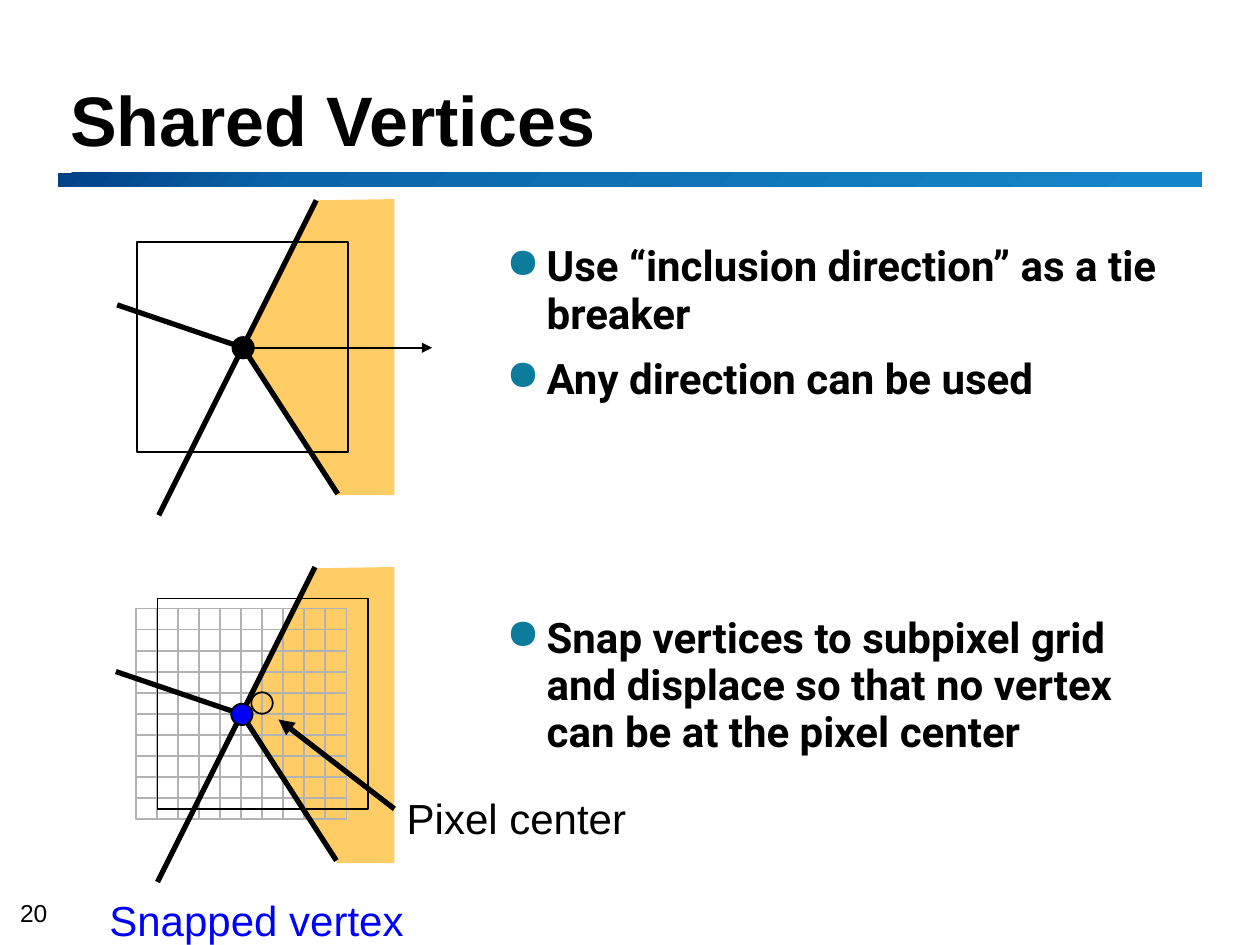
from lxml.etree import SubElement
from pptx import Presentation
from pptx.dml.color import RGBColor
from pptx.enum.shapes import MSO_CONNECTOR as Connector, MSO_SHAPE as Preset
from pptx.enum.text import MSO_ANCHOR as Anchor
from pptx.oxml.ns import qn
from pptx.util import Inches, Pt

COLORS = {
    "black": "000000", "blue": "0000FF", "grid": "B2B2B2",
    "wedge": "FFCC66", "bullet": "0C7B9C",
}
BAR_STOPS = [(0, "004187"), (21, "0A64A8"), (96, "1487C8")]

INSETS = (0.1, 0.05, 0.1, 0.05)
# text, box, insets, anchor, wrap, font
TEXTS = [
    ("20", (0.1, 7.13, 0.34, 0.23), (0.06, 0, 0, 0), Anchor.BOTTOM, True,
     {"size": Pt(14), "name": "Arial"}, "black"),
    ("Shared Vertices", (0.46, 0.33, 9.06, 0.99), INSETS, Anchor.BOTTOM, True,
     {"size": Pt(40), "name": "Arial", "bold": True}, "black"),
    ("Pixel center", (3.13, 6.24, 1.96, 0.5), INSETS, Anchor.TOP, False,
     {"size": Pt(24), "name": "Arial"}, "black"),
    ("Snapped vertex", (0.77, 7.05, 2.56, 0.5), INSETS, Anchor.TOP, False,
     {"size": Pt(24), "name": "Arial"}, "blue"),
]
BODY_BOX = (3.92, 1.88, 5.58, 5.58)
BODY_FONT = {"size": Pt(24), "name": "Roboto", "bold": True}
# text, points of space before
BULLETS = [
    ("Use “inclusion direction” as a tie breaker", 0),
    ("Any direction can be used", 6),
    ("Snap vertices to subpixel grid and displace so that no vertex "
     "can be at the pixel center", 117),
]

WEDGE_X = (2.51, 1.92, 2.68, 3.13, 3.13)
WEDGE_Y = (0.01, 1.16, 2.35, 2.35, 0)
# edge start and end, measured from the shared vertex
EDGES = [((0.58, -1.17), (-0.67, 1.33)), ((0, 0), (-1, -0.34)), ((0, 0), (0.75, 1.16))]
TIE_VERTEX, SNAPPED_VERTEX = (1.93, 2.76), (1.92, 5.67)
PIXEL = 1.67
CELLS = 10
GRID_LEFT, GRID_TOP = 1.08, 4.83
DOT = 0.17

presentation = Presentation()
presentation.slide_width, presentation.slide_height = Inches(10), Inches(7.5)
slide = presentation.slides.add_slide(presentation.slide_layouts[6])


def rgb(color):
    return RGBColor.from_string(COLORS[color])


def paint(shape, fill=None, line=None):
    shape.shadow.inherit = False
    if fill:
        shape.fill.solid()
        shape.fill.fore_color.rgb = rgb(fill)
    else:
        shape.fill.background()
    if line:
        shape.line.color.rgb = rgb(line)
        shape.line.width = Pt(1)
    else:
        shape.line.fill.background()


def add_preset(preset, box, fill=None, line="black"):
    shape = slide.shapes.add_shape(preset, *map(Inches, box))
    paint(shape, fill, line)
    return shape


def add_dot(center, fill=None):
    x, y = center
    add_preset(Preset.OVAL, (x - DOT / 2, y - DOT / 2, DOT, DOT), fill)


def add_line(start, end, width, arrow=False):
    line = slide.shapes.add_connector(Connector.STRAIGHT, *map(Inches, (*start, *end)))
    line.line.color.rgb = rgb("black")
    line.line.width = Pt(width)
    if arrow:
        SubElement(line.line._get_or_add_ln(), qn("a:tailEnd"), type="triangle")
    SubElement(line._element.spPr, qn("a:effectLst"))


def add_wedge(top):
    points = [(Inches(x), Inches(top + y)) for x, y in zip(WEDGE_X, WEDGE_Y)]
    builder = slide.shapes.build_freeform(*points[0])
    builder.add_line_segments(points[1:], close=True)
    paint(builder.convert_to_shape(), "wedge")


def add_edges(vertex):
    for edge in EDGES:
        start, end = [(vertex[0] + dx, vertex[1] + dy) for dx, dy in edge]
        add_line(start, end, 3)


def add_frame(box, insets, anchor, wrap):
    frame = slide.shapes.add_textbox(*map(Inches, box)).text_frame
    frame.word_wrap, frame.vertical_anchor = wrap, anchor
    for side, inset in zip(("left", "top", "right", "bottom"), insets):
        setattr(frame, f"margin_{side}", Inches(inset))
    return frame


def add_run(paragraph, text, font, color):
    run = paragraph.add_run()
    run.text = text
    for name, value in font.items():
        setattr(run.font, name, value)
    run.font.color.rgb = rgb(color)


def add_bullet(paragraph):
    properties = paragraph._p.get_or_add_pPr()
    properties.set("marL", str(Inches(0.32)))
    properties.set("indent", str(-Inches(0.32)))
    color = SubElement(properties, qn("a:buClr"))
    SubElement(color, qn("a:srgbClr"), val=COLORS["bullet"])
    SubElement(properties, qn("a:buChar"), char="●")


def add_title_bar():
    bar = add_preset(Preset.RECTANGLE, (0.46, 1.37, 9.08, 0.11), line=None)
    bar.fill.gradient()
    gradient = bar._element.spPr.find(qn("a:gradFill"))
    for child in list(gradient):
        gradient.remove(child)
    stops = SubElement(gradient, qn("a:gsLst"))
    for percent, color in BAR_STOPS:
        stop = SubElement(stops, qn("a:gs"), pos=str(percent * 1000))
        SubElement(stop, qn("a:srgbClr"), val=color)
    SubElement(gradient, qn("a:lin"), ang=str(45 * 60000), scaled="1")


add_title_bar()

# Tie breaker by inclusion direction
add_wedge(1.58)
add_preset(Preset.RECTANGLE, (1.09, 1.92, PIXEL, PIXEL))
add_edges(TIE_VERTEX)
add_dot(TIE_VERTEX, "black")
add_line(TIE_VERTEX, (3.43, 2.76), 1, arrow=True)

# Vertex snapped to the subpixel grid
add_wedge(4.5)
cell = PIXEL / CELLS
for row in range(CELLS):
    for column in range(CELLS):
        add_preset(Preset.RECTANGLE,
                   (GRID_LEFT + column * cell, GRID_TOP + row * cell, cell, cell),
                   line="grid")
add_preset(Preset.RECTANGLE, (1.25, 4.75, PIXEL, PIXEL))
add_edges(SNAPPED_VERTEX)
add_dot(SNAPPED_VERTEX, "blue")
add_dot((2.08, 5.58))
add_line((3.13, 6.42), (2.21, 5.71), 3, arrow=True)

for text, box, insets, anchor, wrap, font, color in TEXTS:
    paragraph = add_frame(box, insets, anchor, wrap).paragraphs[0]
    if font["size"] == Pt(40):
        paragraph.line_spacing = Pt(36)
    add_run(paragraph, text, font, color)

body = add_frame(BODY_BOX, INSETS, Anchor.TOP, True)
for index, (text, space_before) in enumerate(BULLETS):
    paragraph = body.add_paragraph() if index else body.paragraphs[0]
    add_bullet(paragraph)
    paragraph.line_spacing = Pt(27)
    paragraph.space_before, paragraph.space_after = Pt(space_before), Pt(4)
    add_run(paragraph, text, BODY_FONT, "black")

presentation.save("out.pptx")
